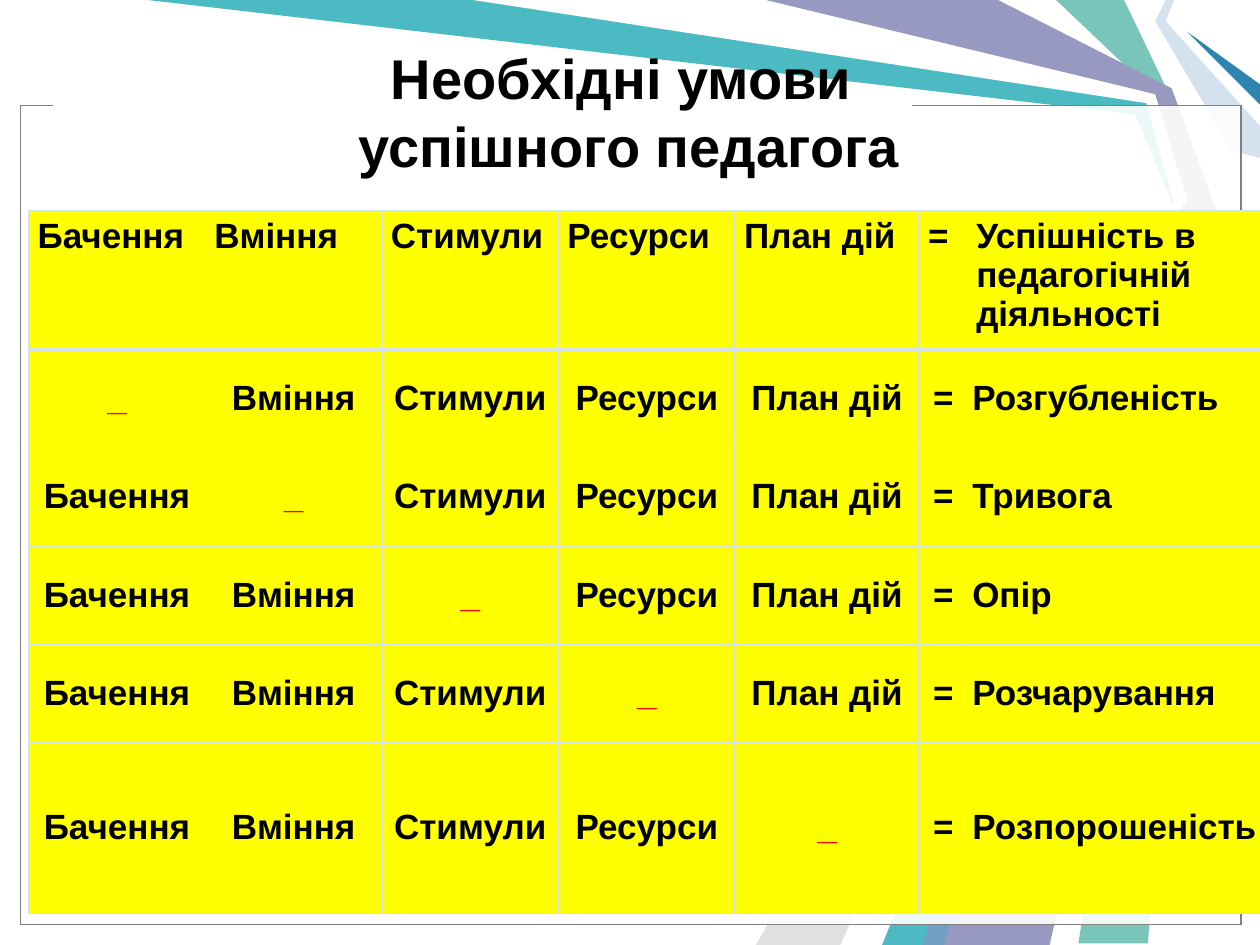
from dataclasses import dataclass

from lxml.etree import SubElement
from pptx import Presentation
from pptx.dml.color import RGBColor
from pptx.enum.shapes import MSO_SHAPE
from pptx.enum.text import MSO_ANCHOR, PP_ALIGN
from pptx.oxml.ns import qn
from pptx.util import Cm, Pt

BLACK, RED, WHITE, YELLOW = "000000", "FF0000", "FFFFFF", "FFFF00"
GRID = "D4E1EE"


@dataclass
class Ribbon:
    fill: str
    points: list[tuple[float, float]]


@dataclass
class Panel:
    box: tuple[float, float, float, float]
    line: str | None = None
    opacity: int = 100


RIBBONS = [
    Ribbon("7AC5B9", [(22.66, 0), (23.6, 1.96), (24.33, 4.24), (23.14, 19.02), (21.74, 19.02),
                      (24.13, 4.24), (23.29, 1.9), (21.29, 0)]),
    Ribbon("4BBAC3", [(2.97, 0), (9.73, 0), (23.22, 1.98), (23.93, 4.29), (18.85, 19.05),
                      (17.58, 19.05), (23.75, 4.39), (22.89, 2.31)]),
    Ribbon("E0E0E0", [(16.94, 19.05), (23.55, 4.6), (15.24, 19.05)]),
    Ribbon(WHITE, [(9.53, 0), (23.11, 2.08), (23.67, 4.11), (17.15, 19.05), (17.78, 19.05),
                   (23.9, 4.01), (23.29, 1.9), (15.24, 0)]),
    Ribbon("D4E1EE", [(23.5, 0), (23.29, 0.43), (24.84, 3.05), (25.4, 3.18), (25.4, 2.54),
                      (23.5, 0.43), (23.67, 0)]),
    Ribbon("2F84AF", [(25.4, 2.11), (23.93, 0.64), (25.4, 1.7)]),
    Ribbon("9899C1", [(15.44, 0), (20.12, 0), (23.62, 1.78), (24.54, 4.29), (21.16, 19.05),
                      (18.62, 19.05), (23.93, 4.01), (23.29, 1.9)]),
    Ribbon("719FC5", [(18.59, 19.05), (23.67, 4.65), (19.02, 19.05)]),
]
FRAME = (0.41, 2.13, 24.61, 16.51)
PANELS = [
    Panel(FRAME, BLACK, 69),
    Panel(FRAME, "808080", 69),
    Panel((1.07, 1.88, 17.32, 0.43)),
]
CONDITIONS = ["Бачення", "Вміння", "Стимули", "Ресурси", "План дій"]
SUCCESS = "Успішність в педагогічній діяльності"
FAILURES = ["Розгубленість", "Тривога", "Опір", "Розчарування", "Розпорошеність"]
COLUMN_WIDTHS = [3.56] * 4 + [3.71, 0.97, 5.97]
ROW_HEIGHTS = [2.67] + [1.98] * 4 + [3.45]


def color(value: str) -> RGBColor:
    return RGBColor.from_string(value)


def fill_shape(shape, value: str) -> None:
    shape.shadow.inherit = False
    shape.fill.solid()
    shape.fill.fore_color.rgb = color(value)
    shape.line.fill.background()


def format_paragraph(paragraph, size: int, value: str, alignment: PP_ALIGN) -> None:
    paragraph.alignment = alignment
    for run in paragraph.runs:
        run.font.name = "Arial"
        run.font.size = Pt(size)
        run.font.bold = True
        run.font.color.rgb = color(value)


def draw_ribbon(slide, ribbon: Ribbon) -> None:
    points = [(Cm(x), Cm(y)) for x, y in ribbon.points]
    builder = slide.shapes.build_freeform(*points[0], scale=1.0)
    builder.add_line_segments(points[1:], close=True)
    fill_shape(builder.convert_to_shape(), ribbon.fill)


def draw_panel(slide, panel: Panel) -> None:
    shape = slide.shapes.add_shape(MSO_SHAPE.RECTANGLE, *map(Cm, panel.box))
    fill_shape(shape, WHITE)
    if panel.opacity < 100:
        fill_color = shape.fill._xPr.find(qn("a:solidFill"))[0]
        SubElement(fill_color, qn("a:alpha"), val=str(panel.opacity * 1000))
    if panel.line:
        shape.line.color.rgb = color(panel.line)
        shape.line.width = Pt(0.75)


def draw_title(slide) -> None:
    shape = slide.shapes.add_textbox(Cm(4.11), Cm(0.76), Cm(17.15), Cm(3.96))
    text_frame = shape.text_frame
    text_frame.word_wrap = True
    text_frame.text = "Необхідні умови \vуспішного педагога"
    format_paragraph(text_frame.paragraphs[0], 32, BLACK, PP_ALIGN.CENTER)


def add_border(cell, side: str, width: float) -> None:
    properties = cell._tc.get_or_add_tcPr()
    line = SubElement(properties, qn(f"a:ln{side}"), w=str(Pt(width)))
    SubElement(SubElement(line, qn("a:solidFill")), qn("a:srgbClr"), val=GRID)


def format_cell(cell, text: str, row: int, column: int) -> None:
    is_header = row == 0
    widths = {"L": 1, "R": 1, "T": 3 if row == 1 else 1, "B": 3 if is_header else 1}
    for side, width in widths.items():
        add_border(cell, side, width)
    cell.fill.solid()
    cell.fill.fore_color.rgb = color(YELLOW)
    cell.margin_left = cell.margin_right = Cm(0.18 if is_header else 0.1)
    cell.margin_top = cell.margin_bottom = Cm(0.13)
    cell.vertical_anchor = MSO_ANCHOR.TOP if is_header else MSO_ANCHOR.MIDDLE
    cell.text_frame.text = text
    is_left = is_header or column == len(COLUMN_WIDTHS) - 1
    format_paragraph(cell.text_frame.paragraphs[0], 20, RED if text == "_" else BLACK,
                     PP_ALIGN.LEFT if is_left else PP_ALIGN.CENTER)


def draw_table(slide) -> None:
    rows = [CONDITIONS + ["=", SUCCESS]]
    for missing, failure in enumerate(FAILURES):
        present = ["_" if index == missing else name for index, name in enumerate(CONDITIONS)]
        rows.append(present + ["=", failure])
    table = slide.shapes.add_table(
        len(rows), len(COLUMN_WIDTHS), Cm(0.58), Cm(4.24),
        Cm(sum(COLUMN_WIDTHS)), Cm(sum(ROW_HEIGHTS))).table
    table.first_row = table.horz_banding = False
    for column, width in zip(table.columns, COLUMN_WIDTHS):
        column.width = Cm(width)
    for table_row, height in zip(table.rows, ROW_HEIGHTS):
        table_row.height = Cm(height)
    for row, texts in enumerate(rows):
        for column, text in enumerate(texts):
            format_cell(table.cell(row, column), text, row, column)


def main() -> None:
    presentation = Presentation()
    presentation.slide_width, presentation.slide_height = Cm(25.4), Cm(19.05)
    slide = presentation.slides.add_slide(presentation.slide_layouts[6])
    for ribbon in RIBBONS:
        draw_ribbon(slide, ribbon)
    for panel in PANELS:
        draw_panel(slide, panel)
    draw_title(slide)
    draw_table(slide)
    presentation.save("out.pptx")


if __name__ == "__main__":
    main()
